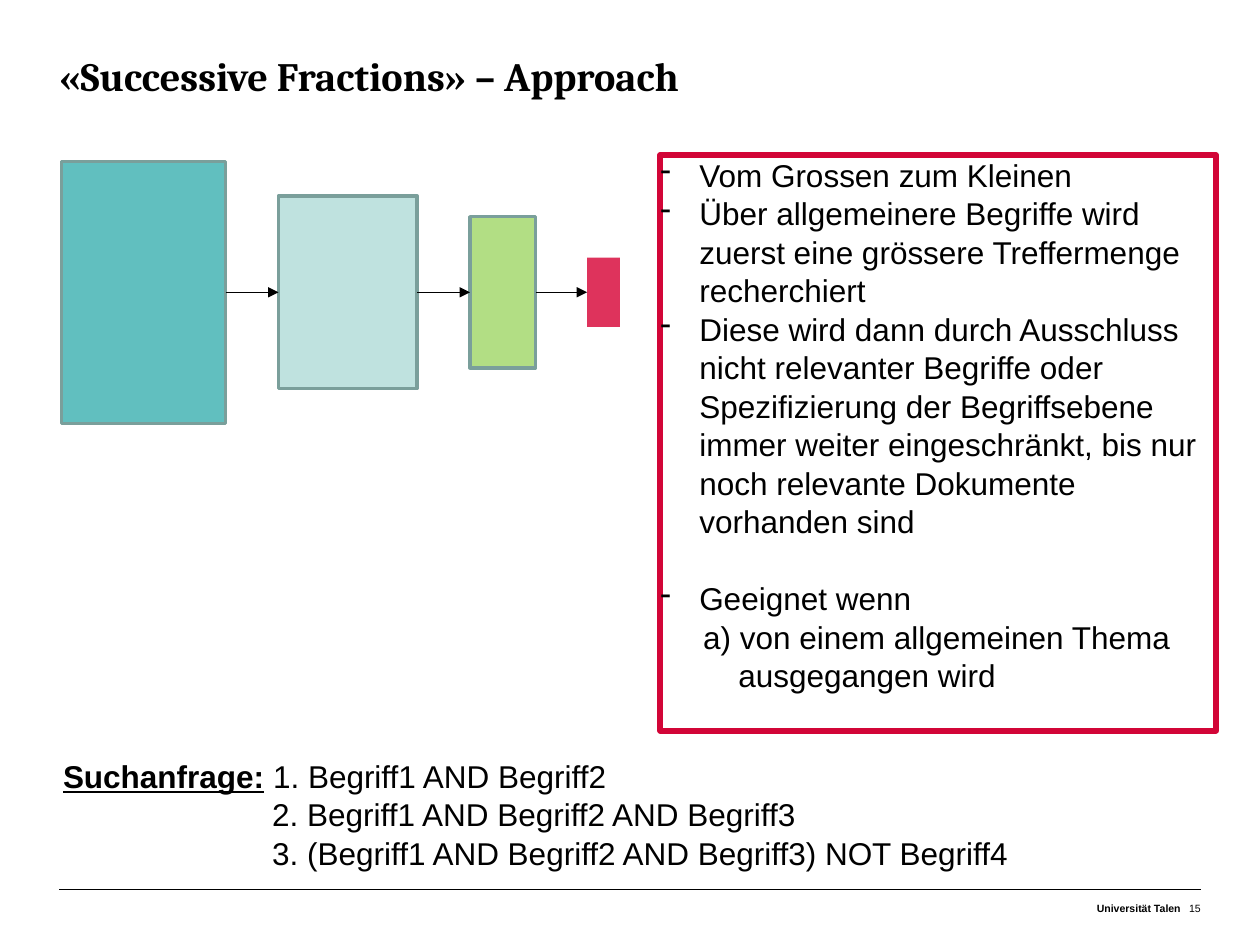
import pptx
import pptx.util
import pptx.dml.color
import pptx.enum.shapes
import pptx.enum.text
import pptx.oxml
import pptx.oxml.ns
from pptx.util import Inches

RGB = pptx.dml.color.RGBColor
BLACK = RGB(0, 0, 0)
TEAL = RGB(0x1E, 0xA5, 0xA5)
MINT = RGB(0xA5, 0xD7, 0xD2)
GREEN = RGB(0x92, 0xD0, 0x50)
ROSE = RGB(0xDE, 0x33, 0x5C)
EDGE = RGB(0x7A, 0x9F, 0x9B)
RED = RGB(0xD2, 0x05, 0x37)

MID = 2.32  # height of the arrows and of the box centres
HANG = 0.31
# left, width, height, fill, has edge and transparency
STEPS = [
    (0.49, 1.3, 2.08, TEAL, True),
    (2.21, 1.1, 1.53, MINT, True),
    (3.73, 0.52, 1.2, GREEN, True),
    (4.66, 0.26, 0.55, ROSE, False),
]
POINTS = [
    "Vom Grossen zum Kleinen",
    "Über allgemeinere Begriffe wird zuerst eine grössere Treffermenge recherchiert",
    "Diese wird dann durch Ausschluss nicht relevanter Begriffe oder Spezifizierung "
    "der Begriffsebene immer weiter eingeschränkt, bis nur noch relevante Dokumente "
    "vorhanden sind",
    "Geeignet wenn",
]
CASES = [("a) von einem allgemeinen Thema", 0.34), ("ausgegangen wird", 0.62)]
QUERY = ["2. Begriff1 AND Begriff2 AND Begriff3",
         "3. (Begriff1 AND Begriff2 AND Begriff3) NOT Begriff4"]


def add_xml(parent, tag, **attrs):
    node = pptx.oxml.ns.qn(tag)
    child = parent.makeelement(node, attrs)
    parent.append(child)
    return child


def set_frame(frame, top=0):
    frame.word_wrap = True
    frame.margin_left = frame.margin_right = frame.margin_bottom = 0
    frame.margin_top = Inches(top)
    frame.vertical_anchor = pptx.enum.text.MSO_ANCHOR.TOP
    return frame


def add_frame(slide, left, top, width, height, inset=0):
    box = slide.shapes.add_textbox(Inches(left), Inches(top), Inches(width), Inches(height))
    return set_frame(box.text_frame, inset)


def style(run, size, bold=False, face="Arial"):
    run.font.size = pptx.util.Pt(size)
    run.font.name = face
    run.font.bold = bold
    run.font.color.rgb = BLACK


def write(frame, text, size=18, bold=False, face="Arial", pitch=22, indent=0, first=0):
    """Fill the empty first paragraph, or append one, and return it."""
    par = frame.paragraphs[0]
    if par.runs:
        par = frame.add_paragraph()
    par.text = text
    par.alignment = pptx.enum.text.PP_ALIGN.LEFT
    if pitch:
        par.line_spacing = pptx.util.Pt(pitch)
    props = par._p.get_or_add_pPr()
    props.set("marL", str(Inches(indent)))
    props.set("indent", str(Inches(first)))
    style(par.runs[0], size, bold, face)
    return par


def add_rect(slide, left, top, width, height):
    rect = slide.shapes.add_shape(pptx.enum.shapes.MSO_SHAPE.RECTANGLE, Inches(left),
                                  Inches(top), Inches(width), Inches(height))
    rect.shadow.inherit = False
    return rect


def add_step(slide, left, width, height, color, edged):
    rect = add_rect(slide, left, MID - height / 2, width, height)
    rect.fill.solid()
    rect.fill.fore_color.rgb = color
    if edged:
        tint = rect._element.spPr.find(".//" + pptx.oxml.ns.qn("a:srgbClr"))
        add_xml(tint, "a:alpha", val="70000")
        rect.line.color.rgb = EDGE
        rect.line.width = pptx.util.Pt(2)
    else:
        rect.line.fill.background()


def add_line(slide, start, end, y, weight, arrow=False):
    line = slide.shapes.add_connector(pptx.enum.shapes.MSO_CONNECTOR.STRAIGHT,
                                      Inches(start), Inches(y), Inches(end), Inches(y))
    line.line.color.rgb = BLACK
    line.line.width = pptx.util.Pt(weight)
    if arrow:
        add_xml(line.line._get_or_add_ln(), "a:tailEnd", type="triangle")
    add_xml(line._element.spPr, "a:effectLst")


def add_panel(slide):
    rect = add_rect(slide, 5.24, 1.23, 4.41, 4.57)
    rect.fill.background()
    rect.line.color.rgb = RED
    rect.line.width = pptx.util.Pt(3.25)
    frame = set_frame(rect.text_frame)
    for text in POINTS:
        par = write(frame, text, indent=HANG, first=-HANG)
        add_xml(par._p.pPr, "a:buChar", char="-")
    par.space_before = pptx.util.Pt(22)
    for text, indent in CASES:
        write(frame, text, indent=indent)


def add_query(slide):
    frame = add_frame(slide, 0.5, 6, 9.15, 0.63)
    par = write(frame, "Suchanfrage:", bold=True)
    par.runs[0].font.underline = True
    rest = par.add_run()
    rest.text = " 1. Begriff1 AND Begriff2"
    style(rest, 18)
    for text in QUERY:
        write(frame, text, indent=1.66)


def add_foot(slide):
    add_line(slide, 0.47, 9.53, 7.06, 0.25)
    for text, left, width, bold in [("Universität Talen", 7.28, 2.09, True),
                                    ("15", 9.37, 0.16, False)]:
        frame = add_frame(slide, left, 7.14, width, 0.2, 0.02)
        par = write(frame, text, 6, bold, pitch=None)
        par.alignment = pptx.enum.text.PP_ALIGN.RIGHT


def main():
    deck = pptx.Presentation()
    deck.slide_width, deck.slide_height = Inches(10), Inches(7.5)
    slide = deck.slides.add_slide(deck.slide_layouts[6])
    add_foot(slide)
    title = add_frame(slide, 0.47, 0.44, 9.06, 0.83)
    write(title, "«Successive Fractions» – Approach", 23, True, "Cambria", 25)
    for step in STEPS:
        add_step(slide, *step)
    for step, after in zip(STEPS, STEPS[1:]):
        add_line(slide, step[0] + step[1], after[0], MID, 0.5, True)
    add_panel(slide)
    add_query(slide)
    deck.save("out.pptx")


if __name__ == "__main__":
    main()
